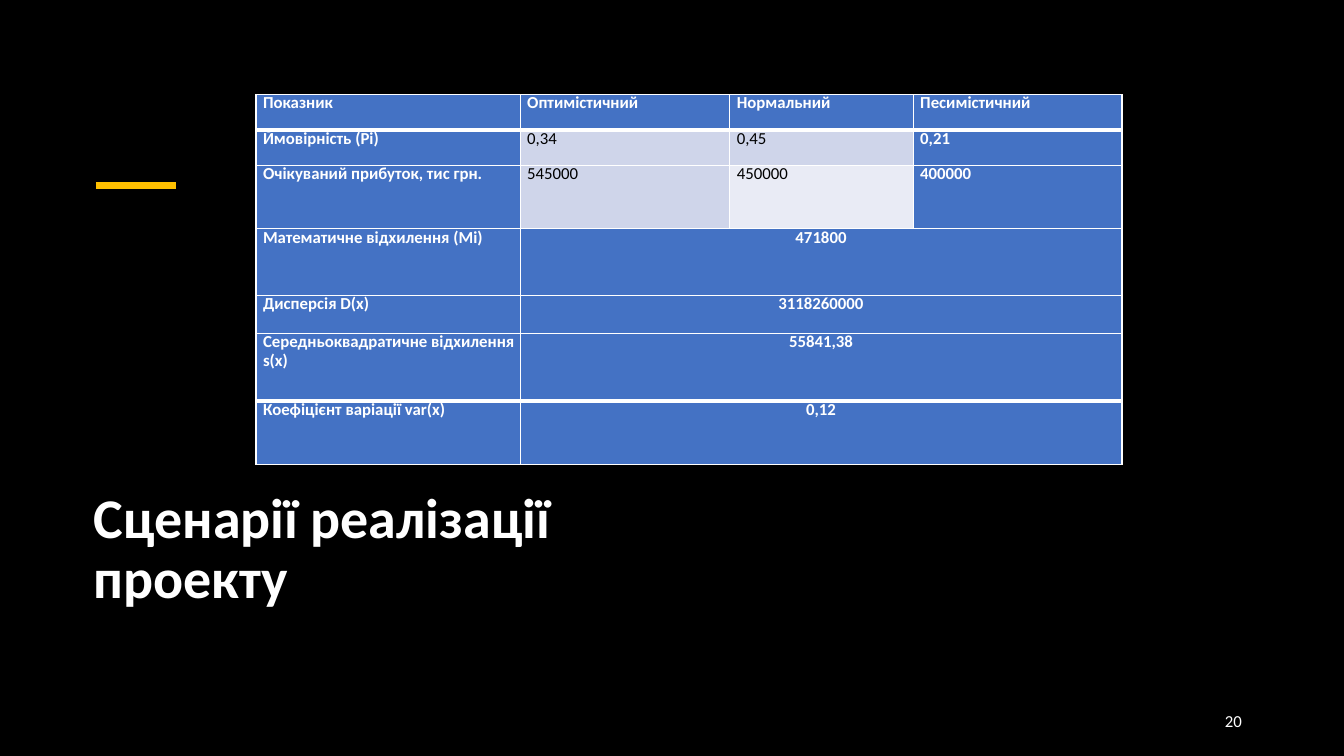
import pptx
import pptx.util
import pptx.dml.color
import pptx.enum.text
import pptx.enum.shapes
import pptx.oxml
import pptx.oxml.ns

HUES = {
    "black": "000000", "white": "FFFFFF", "gold": "FFC000",
    "blue": "4472C4", "pale": "CFD5EA", "light": "E9EBF5",
}
FONT = "Calibri"
WIDE, HIGH = pptx.util.Inches(13.33), pptx.util.Inches(7.5)
ALIGN = pptx.enum.text.PP_ALIGN
ANCHOR = pptx.enum.text.MSO_ANCHOR

# Table content: a row with two values spans the last three columns
ROWS = [
    ("Показник", "Оптимістичний", "Нормальний", "Песимістичний"),
    ("Ймовірність (Рі)", "0,34", "0,45", "0,21"),
    ("Очікуваний прибуток, тис грн.", "545000", "450000", "400000"),
    ("Математичне відхилення (Mi)", "471800"),
    ("Дисперсія D(x)", "3118260000"),
    ("Середньоквадратичне відхилення s(x)", "55841,38"),
    ("Коефіцієнт варіації var(x)", "0,12"),
]
COLS = [19.65, 15.6, 13.65, 15.53]
TALL = [4.67, 4.67, 8.4, 8.8, 5.07, 8.93, 8.4]
TINTS = {(1, 1): "pale", (1, 2): "pale", (2, 1): "pale", (2, 2): "light"}
THICK = {1, 6}  # rows with a heavy rule above


def across(share):
    """Length as a percentage of the slide width."""
    return round(WIDE * share / 100)


def down(share):
    """Length as a percentage of the slide height."""
    return round(HIGH * share / 100)


def place(left, top, width, height):
    return across(left), down(top), across(width), down(height)


def tint(name):
    return pptx.dml.color.RGBColor.from_string(HUES[name])


def write(para, text, size, hue="white", bold=False):
    run = para.add_run()
    run.text = text
    font = run.font
    font.name, font.size, font.bold = FONT, pptx.util.Pt(size), bold
    font.color.rgb = tint(hue)


def add_title(slide):
    title = slide.shapes.title
    title.left, title.top, title.width, title.height = place(6.23, 36.93, 35.55, 52.53)
    frame = title.text_frame
    frame.word_wrap = True
    frame.auto_size = pptx.enum.text.MSO_AUTO_SIZE.NONE
    frame.vertical_anchor = ANCHOR.BOTTOM
    frame.margin_bottom = down(8.67)
    para = frame.paragraphs[0]
    para.alignment, para.line_spacing = ALIGN.LEFT, 0.9
    write(para, "Сценарії реалізації проекту", 40, bold=True)


def add_rule(slide):
    line = slide.shapes.add_connector(
        pptx.enum.shapes.MSO_CONNECTOR.STRAIGHT,
        across(7.13), down(24.53), across(13.13), down(24.53))
    line.line.color.rgb = tint("gold")
    line.line.width = pptx.util.Pt(4.5)
    props = line._element.spPr
    props.append(pptx.oxml.parse_xml(
        f'<a:effectLst {pptx.oxml.ns.nsdecls("a")}/>'))


def edge(cell, row):
    """Draw white borders, heavier beside the rows in THICK."""
    props = cell._tc.get_or_add_tcPr()
    heavy = {"T": row in THICK, "B": row + 1 in THICK}
    for spot, side in enumerate("LRTB"):
        width = pptx.util.Pt(3 if heavy.get(side) else 1)
        props.insert(spot, pptx.oxml.parse_xml(
            f'<a:ln{side} {pptx.oxml.ns.nsdecls("a")} w="{width}"><a:solidFill>'
            f'<a:srgbClr val="{HUES["white"]}"/></a:solidFill></a:ln{side}>'))


def fill_cell(cell, text, hue, span):
    plain = hue != "blue"
    cell.margin_left = 0 if span else pptx.util.Inches(0.07)
    para = cell.text_frame.paragraphs[0]
    para.alignment = ALIGN.CENTER if span else ALIGN.LEFT
    para.line_spacing = pptx.util.Pt(13.4)
    write(para, text, 12, "black" if plain else "white", not plain)


def add_grid(slide):
    frame = slide.shapes.add_table(
        len(ROWS), len(COLS), *place(19.05, 12.53, sum(COLS), sum(TALL)))
    table = frame.table
    table.first_row = table.horz_banding = False
    for col, share in zip(table.columns, COLS):
        col.width = across(share)
    for r, texts in enumerate(ROWS):
        table.rows[r].height = down(TALL[r])
        short = len(texts) < len(COLS)
        if short:
            table.cell(r, 1).merge(table.cell(r, len(COLS) - 1))
        for c in range(len(COLS)):
            cell = table.cell(r, c)
            hue = TINTS.get((r, c), "blue")
            cell.fill.solid()
            cell.fill.fore_color.rgb = tint(hue)
            edge(cell, r)
            cell.margin_top = cell.margin_bottom = cell.margin_right = 0
            if c < len(texts):
                fill_cell(cell, texts[c], hue, short and c == 1)


def add_number(slide):
    frame = slide.shapes.add_textbox(*place(70.65, 92.67, 22.5, 5.33)).text_frame
    frame.word_wrap = True
    frame.vertical_anchor = ANCHOR.MIDDLE
    para = frame.paragraphs[0]
    para.alignment = ALIGN.RIGHT
    write(para, "20", 12)


def main():
    deck = pptx.Presentation()
    deck.slide_width, deck.slide_height = WIDE, HIGH
    slide = deck.slides.add_slide(deck.slide_layouts[5])
    slide.background.fill.solid()
    slide.background.fill.fore_color.rgb = tint("black")
    add_title(slide)
    add_rule(slide)
    add_grid(slide)
    add_number(slide)
    deck.save("out.pptx")


if __name__ == "__main__":
    main()
